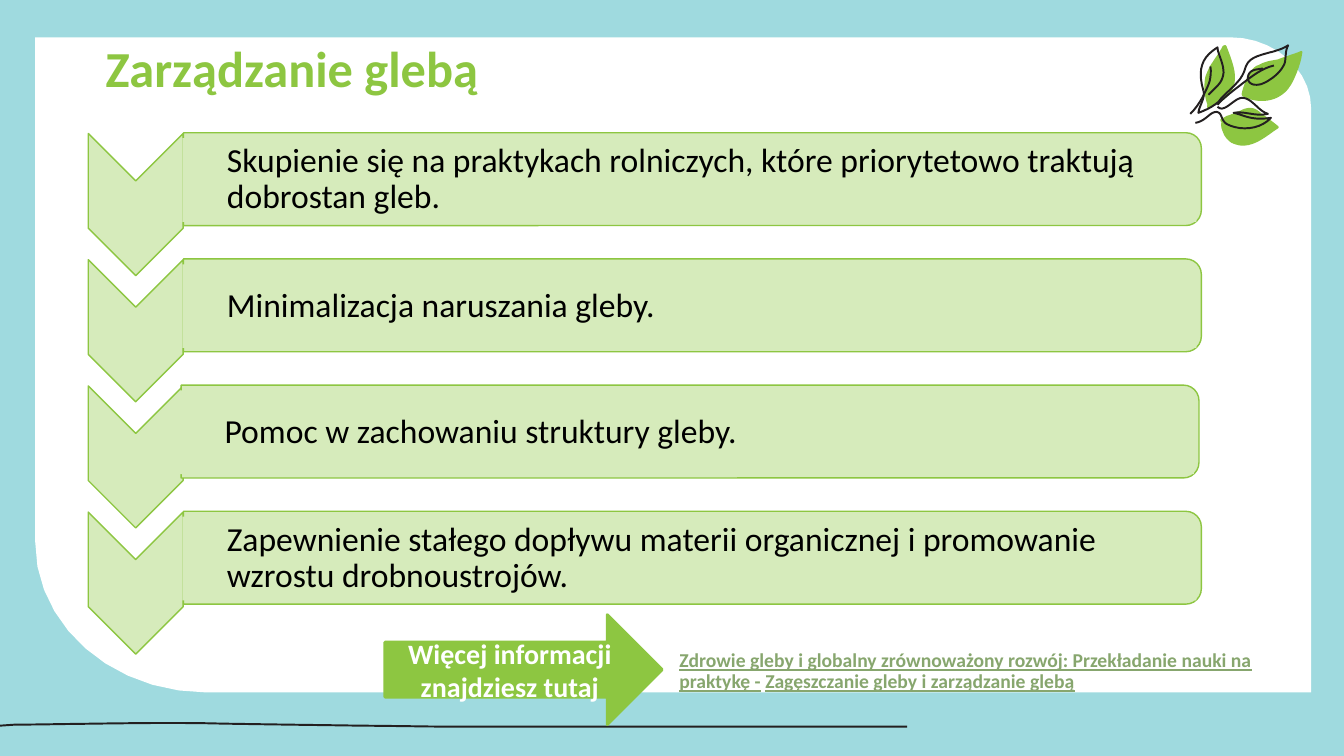
from pptx import Presentation
from pptx.dml.color import RGBColor
from pptx.enum import shapes, text
from pptx.util import Cm, Pt

AQUA = RGBColor(0x9F, 0xDA, 0xDF)
WHITE = RGBColor(0xFF, 0xFF, 0xFF)
BLACK = RGBColor(0, 0, 0)
INK = RGBColor(0x23, 0x1F, 0x20)
GREEN = RGBColor(0x8D, 0xC6, 0x41)
PALE_GREEN = RGBColor(0xD6, 0xEB, 0xBB)
LINK_GREEN = RGBColor(0x87, 0xA6, 0x6E)
TEAL = RGBColor(0x08, 0x6D, 0x6E)

FONT = "Calibri"
INCH = Cm(2.54)
PRECISION = 1000
STEPS = 10


def paint(shape, fill, line=None, width=1):
    shape.shadow.inherit = False
    if fill:
        shape.fill.solid()
        shape.fill.fore_color.rgb = fill
    else:
        shape.fill.background()
    if line:
        shape.line.color.rgb = line
        shape.line.width = Pt(width)
    else:
        shape.line.fill.background()


def draw_outline(start, segments, fill=None, line=None):
    points = [start]
    for segment in segments:
        if len(segment) == 2:
            points.append(segment)
            continue
        x0, y0 = points[-1]
        x1, y1, x2, y2, x3, y3 = segment
        for step in range(1, STEPS + 1):
            t = step / STEPS
            a, b, c, d = (1 - t) ** 3, 3 * t * (1 - t) ** 2, 3 * t * t * (1 - t), t ** 3
            points.append((a * x0 + b * x1 + c * x2 + d * x3,
                           a * y0 + b * y1 + c * y2 + d * y3))
    points = [(round(x * PRECISION), round(y * PRECISION)) for x, y in points]
    builder = slide.shapes.build_freeform(*points[0], scale=INCH / PRECISION)
    builder.add_line_segments(points[1:], close=fill is not None)
    shape = builder.convert_to_shape()
    paint(shape, fill, line, 1.4)


presentation = Presentation()
presentation.slide_width = Cm(33.87)
presentation.slide_height = Cm(19.05)
slide = presentation.slides.add_slide(presentation.slide_layouts[5])
slide.background.fill.solid()
slide.background.fill.fore_color.rgb = AQUA

draw_outline((0.35, 0.37), [
    (12.2, 0.37), (12.65, 0.37, 13.01, 0.69, 13.01, 1.08), (13.01, 6.87),
    (2.05, 6.87), (1.11, 6.87, 0.35, 6.2, 0.35, 5.38)], fill=WHITE)
draw_outline((0, 7.2), [
    (0.14, 7.19), (0.52, 7.19, 1.55, 7.16, 2.23, 7.18),
    (2.81, 7.19, 4.41, 7.21, 4.43, 7.21), (9, 7.21)], line=INK)

title = slide.shapes.title
slide.shapes.element.append(title.element)
title.left, title.top, title.width, title.height = Cm(2.41), Cm(0.99), Cm(29.44), Cm(2.24)
title.text_frame.text = "Zarządzanie glebą"
title.text_frame.vertical_anchor = text.MSO_ANCHOR.TOP
paragraph = title.text_frame.paragraphs[0]
paragraph.alignment = text.PP_ALIGN.LEFT
paragraph.line_spacing = 0.9
paragraph.font.name = FONT
paragraph.font.size = Pt(36)
paragraph.font.bold = True
paragraph.font.color.rgb = GREEN

leaves = [
    ((12.03, 1.06), [
        (12.13, 1.01, 12.24, 0.93, 12.25, 0.82), (12.27, 0.7, 12.21, 0.57, 12.17, 0.46),
        (12.16, 0.44, 12.14, 0.45, 12.13, 0.46), (12.1, 0.52, 12.06, 0.57, 12.03, 0.62),
        (12, 0.66, 11.98, 0.71, 11.96, 0.76), (11.94, 0.85, 11.95, 0.95, 11.98, 1.04),
        (11.97, 1.06, 11.98, 1.08, 12, 1.07)]),
    ((12.72, 0.94), [
        (12.78, 0.9, 12.82, 0.83, 12.85, 0.76), (12.88, 0.69, 12.91, 0.61, 12.92, 0.53),
        (12.93, 0.51, 12.91, 0.5, 12.9, 0.51), (12.83, 0.54, 12.75, 0.56, 12.68, 0.59),
        (12.62, 0.6, 12.55, 0.61, 12.5, 0.64), (12.44, 0.66, 12.41, 0.7, 12.38, 0.75),
        (12.36, 0.81, 12.33, 0.87, 12.32, 0.93), (12.32, 0.95, 12.33, 0.96, 12.34, 0.96),
        (12.46, 1.02, 12.61, 1.02, 12.72, 0.94)]),
    ((12.67, 1.28), [
        (12.69, 1.27, 12.69, 1.26, 12.68, 1.25), (12.63, 1.21, 12.58, 1.17, 12.52, 1.13),
        (12.49, 1.1, 12.45, 1.07, 12.4, 1.07), (12.36, 1.07, 12.32, 1.09, 12.28, 1.11),
        (12.25, 1.12, 12.21, 1.14, 12.17, 1.15), (12.12, 1.18),
        (12.1, 1.18, 12.11, 1.21, 12.12, 1.21), (12.11, 1.24, 12.12, 1.28, 12.13, 1.3),
        (12.15, 1.36, 12.19, 1.41, 12.25, 1.43), (12.41, 1.49, 12.55, 1.36, 12.67, 1.28)]),
]
for start, segments in leaves:
    draw_outline(start, segments, fill=GREEN)

leaf_strokes = [
    ((11.94, 0.9), [
        (11.88, 0.69, 11.92, 0.57, 12.08, 0.47), (12.08, 0.53, 12.14, 0.62, 12.14, 0.72),
        (12.13, 0.82, 12.08, 0.85, 11.99, 0.94)]),
    ((12.01, 0.66), [
        (12.03, 0.8, 11.97, 0.88, 11.94, 0.95), (11.9, 1.02, 11.88, 1.06, 11.81, 1.13)]),
    ((11.94, 0.9), [
        (11.96, 0.98, 11.9, 1.04, 11.89, 1.12), (11.97, 1.09, 12.03, 1.06, 12.09, 1.01),
        (12.14, 0.93, 12.29, 0.84, 12.34, 0.72), (12.37, 0.63, 12.38, 0.6, 12.47, 0.56),
        (12.57, 0.52, 12.69, 0.51, 12.78, 0.45), (12.74, 0.53, 12.77, 0.6, 12.73, 0.66),
        (12.69, 0.74, 12.56, 0.83, 12.49, 0.84), (12.42, 0.85, 12.38, 0.82, 12.38, 0.77),
        (12.39, 0.69, 12.46, 0.69, 12.53, 0.68)]),
    ((12.64, 0.65), [
        (12.5, 0.68, 12.37, 0.8, 12.26, 0.88), (12.2, 0.93, 12.13, 0.98, 12.08, 1.04)]),
    ((12.08, 1.06), [
        (12.15, 1.13, 12.24, 0.97, 12.33, 0.97), (12.43, 0.98, 12.48, 1.1, 12.58, 1.13),
        (12.46, 1.16, 12.36, 1.1, 12.24, 1.12), (12.34, 1.14, 12.41, 1.2, 12.61, 1.17),
        (12.5, 1.29, 12.3, 1.3, 12.17, 1.23), (12.11, 1.19, 12.13, 1.12, 12.07, 1.11),
        (12, 1.11, 11.97, 1.2, 11.86, 1.22)]),
]
for start, segments in leaf_strokes:
    draw_outline(start, segments, line=INK)

practices = [
    ("Skupienie się na praktykach rolniczych, które priorytetowo traktują dobrostan gleb.", 0),
    ("Minimalizacja naruszania gleby.", 0),
    ("Pomoc w zachowaniu struktury gleby.", -0.06),
    ("Zapewnienie stałego dopływu materii organicznej i promowanie wzrostu drobnoustrojów.", 0),
]
text_boxes = []
for row, (practice, shift) in enumerate(practices):
    offset = row * 3.18
    chevron = slide.shapes.add_shape(
        shapes.MSO_SHAPE.CHEVRON, Cm(1.63), Cm(3.96 + offset), Cm(3.58), Cm(2.39))
    bar = slide.shapes.add_shape(
        shapes.MSO_SHAPE.ROUND_2_SAME_RECTANGLE,
        Cm(16.28 + shift), Cm(-8.31 + offset), Cm(2.34), Cm(25.65))
    for shape in (chevron, bar):
        shape.rotation = 90
        paint(shape, PALE_GREEN, GREEN)
    label = slide.shapes.add_textbox(
        Cm(4.6 + shift), Cm(3.48 + offset), Cm(25.55), Cm(2.11))
    paint(label, PALE_GREEN)
    paragraph = label.text_frame.paragraphs[0]
    paragraph.text = practice
    paragraph.font.size = Pt(24)
    paragraph.font.color.rgb = BLACK
    text_boxes.append(label)

links = slide.shapes.add_textbox(Cm(16), Cm(15.88), Cm(16.26), Cm(2.11))
paragraph = links.text_frame.paragraphs[0]
paragraph.font.size = Pt(14)
paragraph.font.bold = True
for wording, color, underline in [
    ("Zdrowie gleby i globalny zrównoważony rozwój: Przekładanie nauki na praktykę -",
     LINK_GREEN, True),
    (" ", TEAL, False),
    ("Zagęszczanie gleby i zarządzanie glebą", LINK_GREEN, True),
]:
    run = paragraph.add_run()
    run.text = wording
    run.font.color.rgb = color
    run.font.underline = underline
text_boxes.append(links)

for box in text_boxes:
    frame = box.text_frame
    frame.word_wrap = True
    frame.vertical_anchor = text.MSO_ANCHOR.MIDDLE
    frame.margin_left = Cm(1.12)
    frame.margin_top = frame.margin_right = frame.margin_bottom = Cm(0.05)
    frame.paragraphs[0].line_spacing = 0.9
    frame.paragraphs[0].font.name = FONT

arrow = slide.shapes.add_shape(
    shapes.MSO_SHAPE.RIGHT_ARROW, Cm(9.7), Cm(15.49), Cm(6.99), Cm(2.77))
paint(arrow, GREEN, GREEN, 2)
arrow.text_frame.vertical_anchor = text.MSO_ANCHOR.MIDDLE
paragraph = arrow.text_frame.paragraphs[0]
paragraph.text = "Więcej informacji znajdziesz tutaj"
paragraph.alignment = text.PP_ALIGN.CENTER
paragraph.font.name = FONT
paragraph.font.size = Pt(20)
paragraph.font.bold = True
paragraph.font.color.rgb = WHITE

presentation.save("out.pptx")
